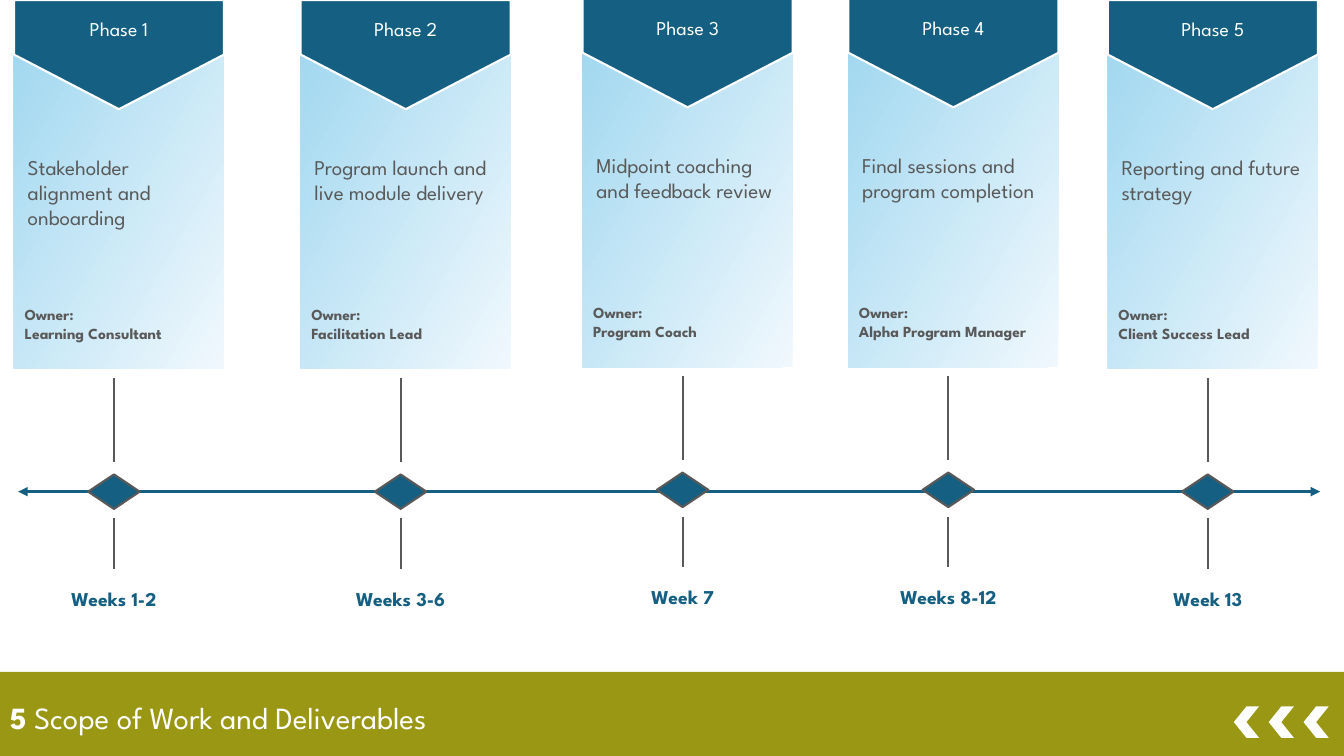
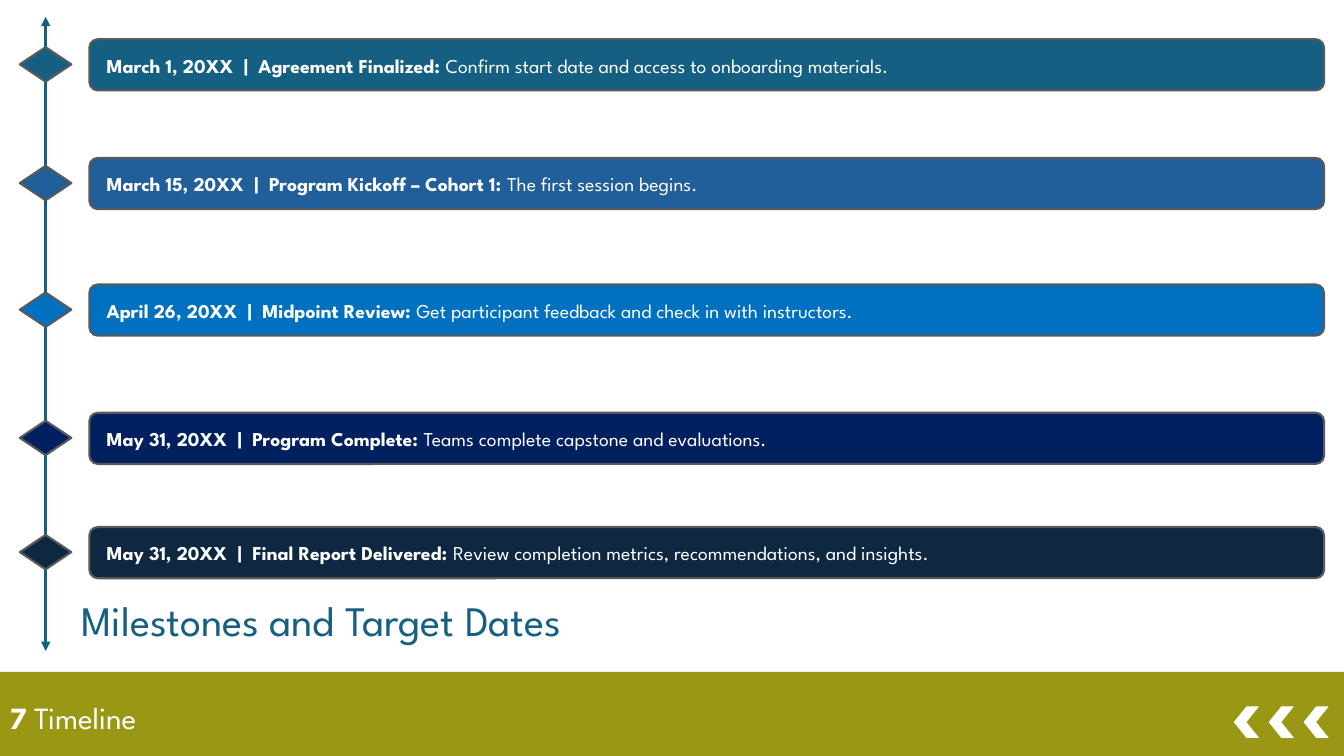
from lxml import etree
from pptx import Presentation
from pptx.dml.color import RGBColor
from pptx.enum.shapes import MSO_CONNECTOR, MSO_SHAPE
from pptx.enum.text import MSO_AUTO_SIZE, PP_ALIGN
from pptx.oxml.ns import qn
from pptx.util import Pt

RECT = MSO_SHAPE.RECTANGLE
ROUND = MSO_SHAPE.ROUNDED_RECTANGLE
ARROW = MSO_SHAPE.PENTAGON
CHEVRON = MSO_SHAPE.CHEVRON
DIAMOND = MSO_SHAPE.FLOWCHART_DECISION
STRAIGHT = MSO_CONNECTOR.STRAIGHT
LEFT, CENTER = PP_ALIGN.LEFT, PP_ALIGN.CENTER
GROW = MSO_AUTO_SIZE.SHAPE_TO_FIT_TEXT

WIDTH, HEIGHT = 960, 540
FONT = "League Spartan"
COLORS = {
    "teal": "156082", "olive": "9A9715", "gray": "595959", "white": "FFFFFF",
    "pale": "F0F8FD", "sky": "A2D8F0", "steel": "215F9A", "blue": "0070C0",
    "navy": "002060", "ink": "0E2841",
}


def color(name):
    return RGBColor.from_string(COLORS[name])


class Deck:
    """Holds the style and the current slide."""

    def __init__(self):
        self.prs = Presentation()
        self.prs.slide_width, self.prs.slide_height = Pt(WIDTH), Pt(HEIGHT)
        self.slide = None

    def page(self, num, title):
        """Start a slide with its footer band, title and chevrons."""
        self.slide = self.prs.slides.add_slide(self.prs.slide_layouts[6])
        self.shape(RECT, 0, 480, WIDTH, 60, "olive")
        self.text([(num, True), (f" {title}", False)], 0, 495.4, 660, 34, 22, "white")
        for i in range(3):
            self.shape(CHEVRON, 881.3 + 24.9 * i, 504.6, 18, 22.4, "white", turn=180)

    def shape(self, kind, x, y, w, h, fill, line=None, turn=0):
        """Add a preset shape; a pair of colours makes a gradient."""
        item = self.slide.shapes.add_shape(kind, Pt(x), Pt(y), Pt(w), Pt(h))
        item.shadow.inherit = False
        item.rotation = turn
        if isinstance(fill, tuple):
            item.fill.gradient()
            item.fill.gradient_angle = 150
            for stop, name in zip(item.fill.gradient_stops, fill):
                stop.color.rgb = color(name)
        else:
            item.fill.solid()
            item.fill.fore_color.rgb = color(fill)
        if line:
            item.line.color.rgb = color(line)
            item.line.width = Pt(1.5)
        else:
            item.line.fill.background()

    def mark(self, x, y, fill):
        """Add a diamond centred on a point."""
        self.shape(DIAMOND, x - 18.4, y - 12.3, 36.8, 24.6, fill, "gray")

    def line(self, x1, y1, x2, y2, name="gray", width=1.5, ends=False):
        item = self.slide.shapes.add_connector(STRAIGHT, Pt(x1), Pt(y1), Pt(x2), Pt(y2))
        item.line.color.rgb = color(name)
        item.line.width = Pt(width)
        props = item._element.spPr
        if ends:
            for tag in ("a:headEnd", "a:tailEnd"):
                etree.SubElement(props.find(qn("a:ln")), qn(tag), type="triangle")
        etree.SubElement(props, qn("a:effectLst"))

    def text(self, runs, x, y, w, h, size, name, align=LEFT):
        """Add a text box from (text, bold) runs; a newline breaks the line."""
        frame = self.slide.shapes.add_textbox(Pt(x), Pt(y), Pt(w), Pt(h)).text_frame
        frame.word_wrap = True
        frame.auto_size = GROW
        para = frame.paragraphs[0]
        para.alignment = align
        for words, bold in runs:
            for i, part in enumerate(words.split("\n")):
                if i:
                    para.add_line_break()
                run = para.add_run()
                run.text = part
                style = {"name": FONT, "size": Pt(size), "bold": bold}
                for key, value in style.items():
                    setattr(run.font, key, value)
                run.font.color.rgb = color(name)

    def axis(self, x1, y1, x2, y2):
        self.line(x1, y1, x2, y2, "teal", 2.25, ends=True)

    def phase(self, num, x, dy, task, owner, weeks):
        """Add one phase: card, banner, stems, diamond and weeks."""
        mid = x + 71.4
        self.shape(RECT, x, 38.2 + dy, 150, 225.4, ("pale", "sky"))
        self.mark(mid, 351.2 + dy, "teal")
        for top, end in ((270, 329.8), (370.3, 406.6)):
            self.line(mid, top + dy, mid, end + dy)
        self.text([(weeks, True)], mid - 49.3, 415.4 + dy, 98.6, 24.2, 14, "teal", CENTER)
        self.shape(ARROW, x + 36, dy - 36, 78, 150, "teal", "white", turn=90)
        self.text([(f"Phase {num}", False)], x, 8.9 + dy, 150, 24.2, 14, "white", CENTER)
        self.text([(task, False)], x + 2.7, 106.8 + dy, 142, 62, 15, "gray")
        self.text([(f"Owner:\n{owner}", True)], x + 0.5, 214.5 + dy, 149, 34, 11, "gray")

    def stone(self, y, fill, date, name, note):
        """Add one milestone: diamond, bar and text."""
        self.mark(32.6, y + 18, fill)
        self.shape(ROUND, 63.8, y, 882, 36.6, fill, "gray")
        self.text([(f"{date}  |  {name}: ", True), (note, False)],
                  69.1, y + 6.8, 876, 24.2, 14, "white")


PHASES = [
    (10, 0, "Stakeholder alignment and onboarding", "Learning Consultant", "Weeks 1-2"),
    (214.8, 0, "Program launch and live module delivery", "Facilitation Lead", "Weeks 3-6"),
    (416.2, -1.3, "Midpoint coaching and feedback review", "Program Coach", "Week 7"),
    (606, -1.3, "Final sessions and program completion", "Alpha Program Manager",
     "Weeks 8-12"),
    (791.3, 0, "Reporting and future strategy", "Client Success Lead", "Week 13"),
]
STONES = [
    (28, "teal", "March 1, 20XX", "Agreement Finalized",
     "Confirm start date and access to onboarding materials."),
    (112.8, "steel", "March 15, 20XX", "Program Kickoff – Cohort 1",
     "The first session begins."),
    (203.2, "blue", "April 26, 20XX", "Midpoint Review",
     "Get participant feedback and check in with instructors."),
    (294.8, "navy", "May 31, 20XX", "Program Complete",
     "Teams complete capstone and evaluations."),
    (376.4, "ink", "May 31, 20XX", "Final Report Delivered",
     "Review completion metrics, recommendations, and insights."),
]


def main():
    deck = Deck()

    # Phases along a horizontal axis
    deck.page("5", "Scope of Work and Deliverables")
    deck.axis(13, 351.2, 943, 351.2)
    for num, row in enumerate(PHASES, 1):
        deck.phase(num, *row)

    # Milestones down a vertical axis
    deck.page("7", "Timeline")
    deck.axis(32.6, 12, 32.6, 465)
    for row in STONES:
        deck.stone(*row)
    deck.text([("Milestones and Target Dates", False)], 51, 421.2, 660, 44, 30, "teal")

    deck.prs.save("out.pptx")


if __name__ == "__main__":
    main()
